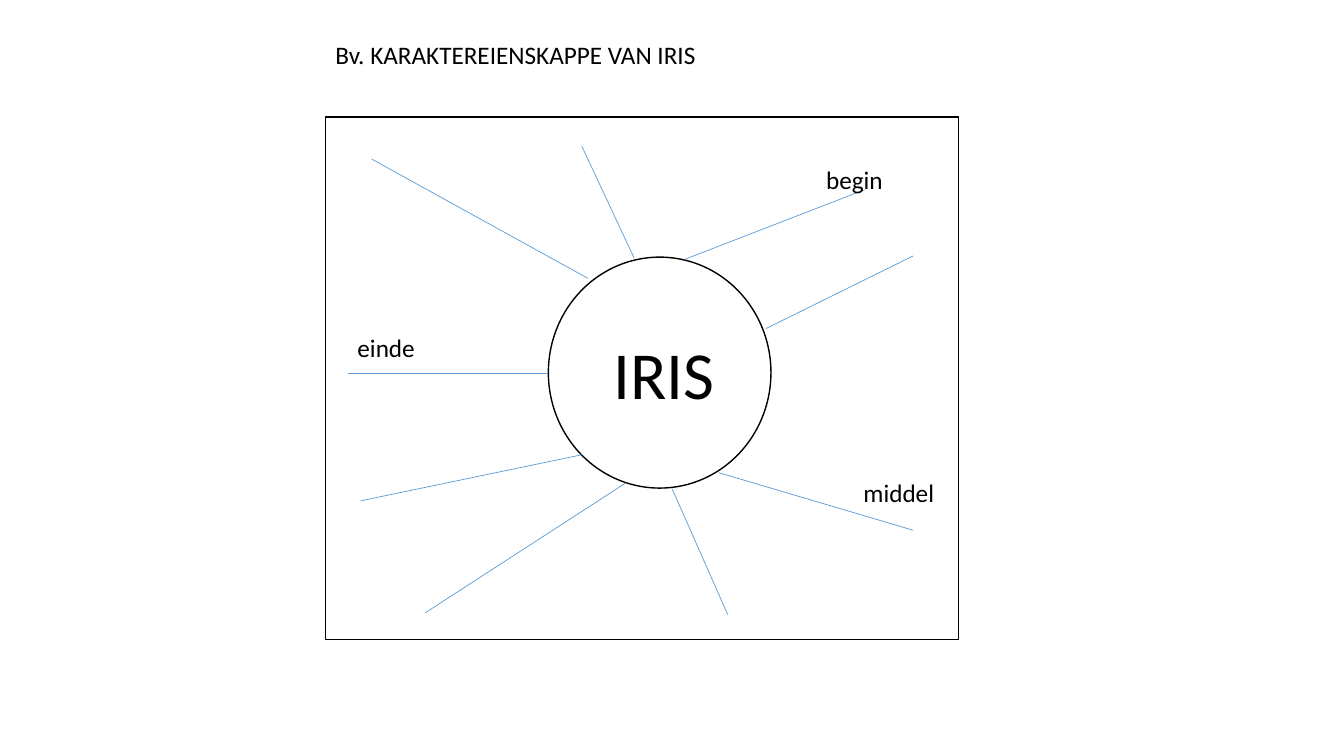
from lxml import etree
from pptx import Presentation
from pptx.dml.color import RGBColor
from pptx.enum.shapes import MSO_CONNECTOR, MSO_SHAPE
from pptx.enum.text import MSO_ANCHOR, MSO_AUTO_SIZE, PP_ALIGN
from pptx.oxml.ns import qn
from pptx.util import Cm, Pt

STRAIGHT = MSO_CONNECTOR.STRAIGHT
RECTANGLE, OVAL = MSO_SHAPE.RECTANGLE, MSO_SHAPE.OVAL
TOP, LEFT, NO_AUTOFIT = MSO_ANCHOR.TOP, PP_ALIGN.LEFT, MSO_AUTO_SIZE.NONE
COLORS = {"ink": "000000", "paper": "FFFFFF", "ray": "5B9BD5"}


def color(name):
    return RGBColor.from_string(COLORS[name])


def write(frame, text, size):
    frame.word_wrap = True
    frame.auto_size = NO_AUTOFIT
    frame.vertical_anchor = TOP
    paragraph = frame.paragraphs[0]
    paragraph.alignment = LEFT
    paragraph.line_spacing = 1.0
    paragraph.space_before = Pt(0)
    run = paragraph.add_run()
    run.text = text
    run.font.name = "Calibri"
    run.font.size = Pt(size)
    run.font.color.rgb = color("ink")


prs = Presentation()
prs.slide_width, prs.slide_height = Cm(33.87), Cm(19.05)
slide = prs.slides.add_slide(prs.slide_layouts[5])

heading = slide.shapes.title
heading.left, heading.top = Cm(8.2), Cm(0.86)
heading.width, heading.height = Cm(14.58), Cm(1.02)
write(heading.text_frame, "Bv. KARAKTEREIENSKAPPE VAN IRIS", 18)

# Frame and central circle
for outline, *box in [
    (RECTANGLE, 8.2, 2.95, 15.95, 13.16),
    (OVAL, 13.82, 6.48, 5.61, 5.82),
]:
    panel = slide.shapes.add_shape(outline, *map(Cm, box))
    panel.shadow.inherit = False
    panel.fill.solid()
    panel.fill.fore_color.rgb = color("paper")
    panel.line.color.rgb = color("ink")
    panel.line.width = Pt(1)

# Rays: start on the circle, end in the frame
for ends in [
    (17.27, 6.53, 21.79, 4.78),
    (13.82, 9.4, 8.76, 9.4),
    (18.11, 11.91, 23.01, 13.36),
    (14.81, 7.01, 9.37, 4.01),
    (14.66, 11.46, 9.09, 12.62),
    (15.77, 12.17, 10.72, 15.44),
    (16.94, 12.32, 18.34, 15.49),
    (19.3, 8.28, 23.01, 6.45),
    (15.98, 6.5, 14.66, 3.68),
]:
    ray = slide.shapes.add_connector(STRAIGHT, *map(Cm, ends))
    ray.line.color.rgb = color("ray")
    ray.line.width = Pt(0.5)
    etree.SubElement(ray._element.spPr, qn("a:effectLst"))

for text, size, *box in [
    ("IRIS", 48, 15.21, 8.26, 3.45, 2.31),
    ("begin", 18, 20.57, 4.01, 2.92, 1.02),
    ("middel", 18, 21.51, 11.91, 2.36, 1.02),
    ("einde", 18, 8.76, 8.26, 3.33, 1.02),
]:
    label = slide.shapes.add_textbox(*map(Cm, box))
    write(label.text_frame, text, size)

prs.save("out.pptx")
